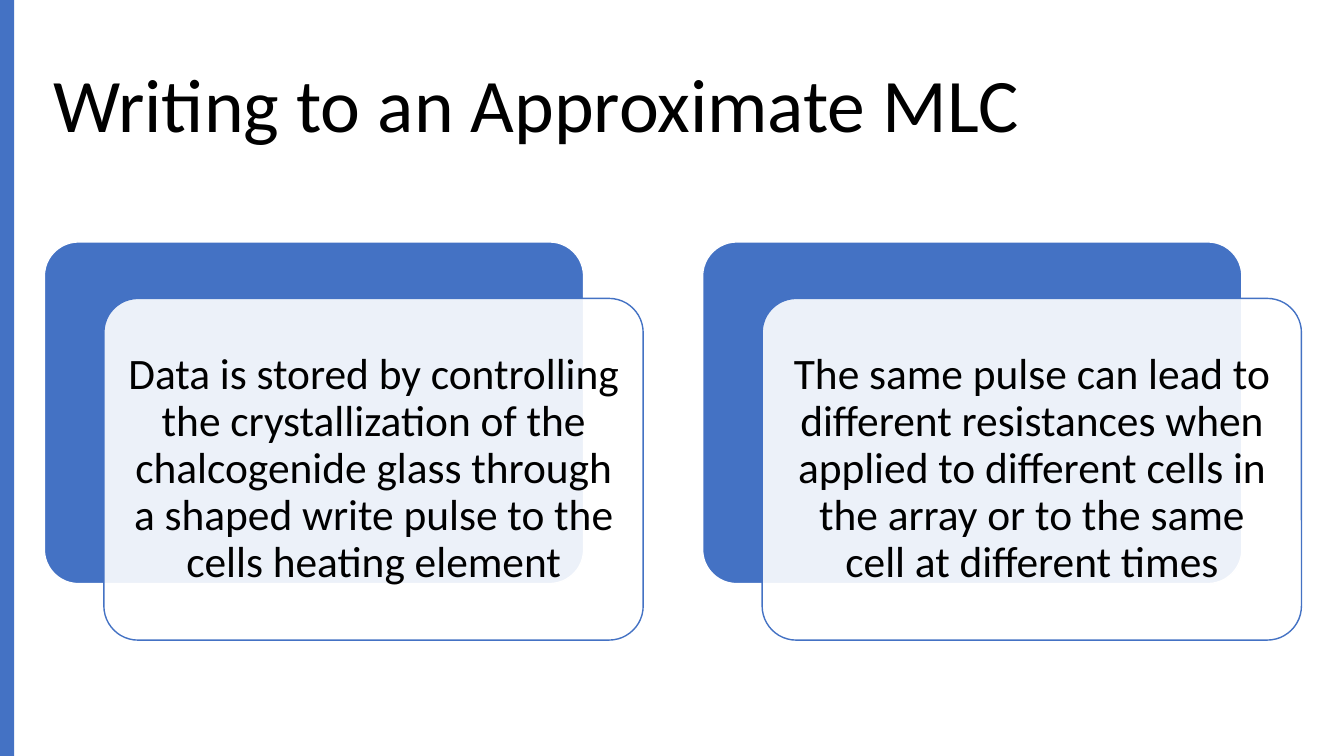
import dataclasses

import lxml.etree
import pptx
import pptx.dml.color
import pptx.enum.shapes
import pptx.enum.text
import pptx.oxml.ns
import pptx.util

Kind = pptx.enum.shapes.MSO_SHAPE
Align = pptx.enum.text.PP_ALIGN


@dataclasses.dataclass(frozen=True)
class Theme:
    blue: str = "4472C4"
    white: str = "FFFFFF"
    black: str = "000000"
    font: str = "Calibri"
    title: int = 54
    body: int = 31
    line: int = 1
    lead: float = 0.9
    clear: int = 90


@dataclasses.dataclass(frozen=True)
class Box:
    """A frame in percent of the slide's width and height."""

    left: float
    top: float
    width: float
    height: float

    def move(self, right: float, down: float) -> "Box":
        return dataclasses.replace(self, left=self.left + right, top=self.top + down)

    def shrink(self, side: float, end: float) -> "Box":
        return Box(
            self.left + side,
            self.top + end,
            self.width - 2 * side,
            self.height - 2 * end,
        )


@dataclasses.dataclass(frozen=True)
class Card:
    column: int
    text: str


THEME = Theme()
WIDE = pptx.util.Inches(13.333)
HIGH = pptx.util.Inches(7.5)
BAR = Box(0, 0, 1.05, 100)
TITLE = Box(3.23, 4.67, 93.6, 19.33)
FIRST = Box(3.3, 32, 40.13, 45.2)
PITCH = 48.98
CARDS = (
    Card(
        0,
        "Data is stored by controlling the crystallization of the chalcogenide "
        "glass through a shaped write pulse to the cells heating element",
    ),
    Card(
        1,
        "The same pulse can lead to different resistances when applied to "
        "different cells in the array or to the same cell at different times",
    ),
)


def place(box: Box) -> tuple[int, int, int, int]:
    return (
        round(WIDE * box.left / 100),
        round(HIGH * box.top / 100),
        round(WIDE * box.width / 100),
        round(HIGH * box.height / 100),
    )


def tint(code: str) -> pptx.dml.color.RGBColor:
    return pptx.dml.color.RGBColor.from_string(code)


def draw(slide, kind: Kind, box: Box, fill: str, line: str | None = None):
    shape = slide.shapes.add_shape(kind, *place(box))
    shape.shadow.inherit = False
    shape.fill.solid()
    shape.fill.fore_color.rgb = tint(fill)
    if line is None:
        shape.line.fill.background()
    else:
        shape.line.color.rgb = tint(line)
        shape.line.width = pptx.util.Pt(THEME.line)
    if kind == Kind.ROUNDED_RECTANGLE:
        shape.adjustments[0] = 0.1
    return shape


def fade(shape, share: int) -> None:
    name = pptx.oxml.ns.qn
    color = shape.fill._xPr.find(name("a:solidFill")).find(name("a:srgbClr"))
    lxml.etree.SubElement(color, name("a:alpha")).set("val", str(share * 1000))


def write(slide, box: Box, text: str, size: int, align: Align, inset: float | None = None) -> None:
    frame = slide.shapes.add_textbox(*place(box)).text_frame
    frame.word_wrap = True
    frame.vertical_anchor = pptx.enum.text.MSO_ANCHOR.MIDDLE
    if inset is not None:
        gap = pptx.util.Inches(inset)
        frame.margin_left = frame.margin_right = gap
        frame.margin_top = frame.margin_bottom = gap
    frame.text = text
    para = frame.paragraphs[0]
    para.alignment = align
    para.line_spacing = THEME.lead
    font = para.runs[0].font
    font.name = THEME.font
    font.size = pptx.util.Pt(size)
    font.color.rgb = tint(THEME.black)


def stack(slide, card: Card) -> None:
    back = FIRST.move(card.column * PITCH, 0)
    front = back.move(4.43, 7.47)
    draw(slide, Kind.ROUNDED_RECTANGLE, back, THEME.blue, THEME.white)
    pane = draw(slide, Kind.ROUNDED_RECTANGLE, front, THEME.white, THEME.blue)
    fade(pane, THEME.clear)
    write(slide, front.shrink(0.75, 1.3), card.text, THEME.body, Align.CENTER, 0.13)


def main() -> None:
    deck = pptx.Presentation()
    deck.slide_width, deck.slide_height = WIDE, HIGH
    slide = deck.slides.add_slide(deck.slide_layouts[6])
    write(slide, TITLE, "Writing to an Approximate MLC", THEME.title, Align.LEFT)
    draw(slide, Kind.RECTANGLE, BAR, THEME.blue)
    for card in CARDS:
        stack(slide, card)
    deck.save("out.pptx")


if __name__ == "__main__":
    main()
